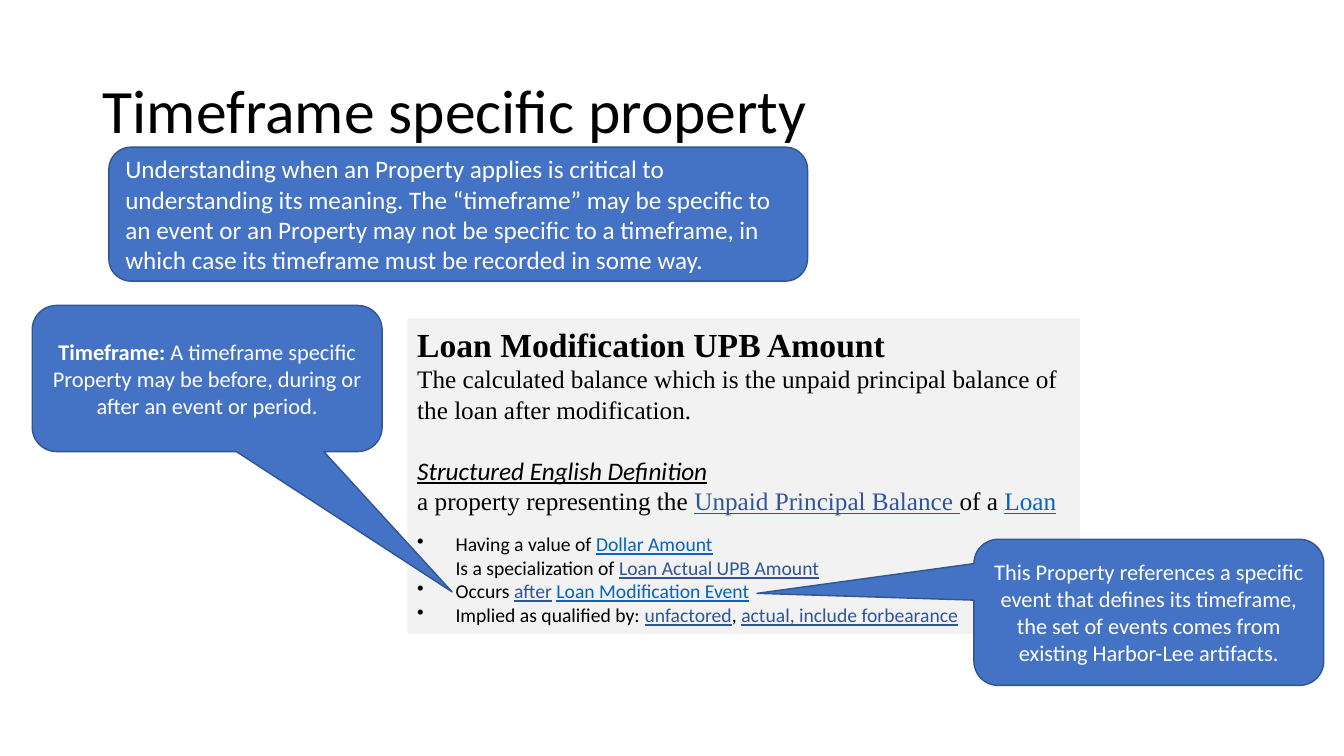
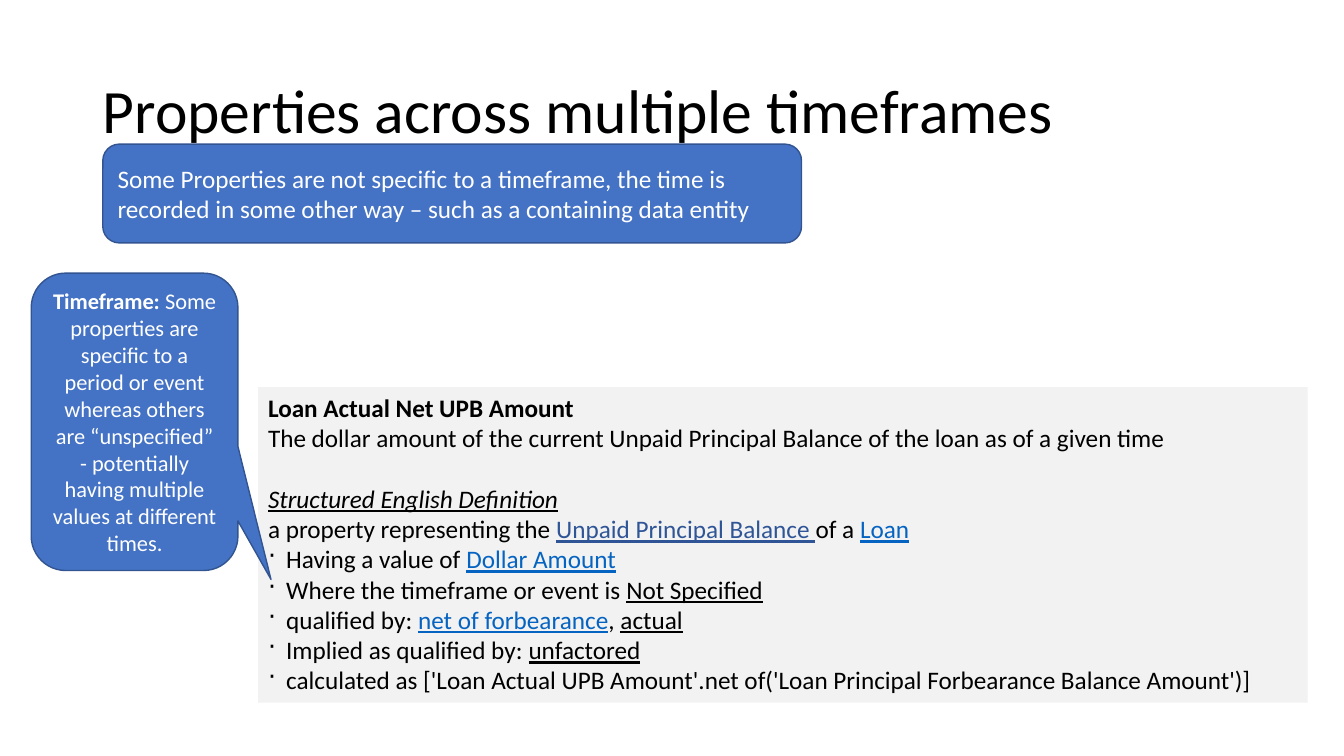
"""Build two slides on timeframe properties, each with a note, a definition panel and callouts."""
from pptx import Presentation
from pptx.dml.color import RGBColor
from pptx.enum.shapes import MSO_SHAPE as Shape
from pptx.enum.text import MSO_ANCHOR as Anchor, MSO_AUTO_SIZE as AutoSize, PP_ALIGN as Align
from pptx.oxml.ns import qn
from pptx.util import Pt
from lxml.etree import SubElement

PX = 9144
COLORS = {"black": "000000", "white": "FFFFFF", "blue": "4472C4", "outline": "325491",
          "panel": "F2F2F2", "term": "2F5597", "link": "0563C1"}
SANS, SERIF = "Calibri", "Times New Roman"
STYLES = {
    "plain": {},
    "bold": {"bold": True},
    "heading": {"italic": True, "underline": True},
    "under": {"underline": True},
    "term": {"underline": True, "color": "term"},
    "link": {"underline": True, "color": "link"},
}


def write(frame, paragraphs, base, alignment=Align.LEFT):
    """Fill a text frame with (format, spans) paragraphs over a base font."""
    frame.word_wrap = True
    for index, (layout, spans) in enumerate(paragraphs):
        para = frame.paragraphs[0] if index == 0 else frame.add_paragraph()
        para.alignment = alignment
        layout = dict(layout)
        font = {**base, **layout.pop("font", {})}
        bullet = layout.pop("bullet", None)
        for name, value in layout.items():
            setattr(para, name, value)
        if bullet:
            mark, indent = bullet
            props = para._p.get_or_add_pPr()
            props.set("marL", str(indent * PX))
            props.set("indent", str(-indent * PX))
            SubElement(props, qn("a:buChar")).set("char", mark)
        for text, style in spans:
            span = para.add_run()
            span.text = text
            values = {**font, **STYLES[style]}
            span.font.color.rgb = RGBColor.from_string(COLORS[values.pop("color")])
            for name, value in values.items():
                setattr(span.font, name, value)


def add_box(page, kind, place, fill, line=None):
    """Add a flat shape at a px place and return it."""
    box = page.shapes.add_shape(kind, *(length * PX for length in place))
    box.shadow.inherit = False
    box.fill.solid()
    box.fill.fore_color.rgb = RGBColor.from_string(COLORS[fill])
    if line:
        box.line.color.rgb = RGBColor.from_string(COLORS[line])
        box.line.width = Pt(1)
    else:
        box.line.fill.background()
    box.text_frame.vertical_anchor = Anchor.MIDDLE if line else Anchor.TOP
    return box


serif = {"font": {"name": SERIF}}
item = {"font": {"size": Pt(14)}, "bullet": ("•", 38)}
dot = {"bullet": ("·", 18)}
definition = [("a property representing the ", "plain"), ("Unpaid Principal Balance ", "term"),
              ("of a ", "plain"), ("Loan", "link")]
heading = ({"space_before": Pt(22)}, [("Structured English Definition", "heading")])

slides = [
    {
        "title": "Timeframe specific property",
        "note": ((108, 146, 693, 133),
                 "Understanding when an Property applies is critical to understanding its meaning. "
                 "The “timeframe” may be specific to an event or an Property may not be specific to "
                 "a timeframe, in which case its timeframe must be recorded in some way."),
        "panel": ((404, 316, 667, 313), [
            ({"font": {"name": SERIF, "size": Pt(24)}}, [("Loan Modification UPB Amount", "bold")]),
            (serif, [("The calculated balance which is the unpaid principal balance of the loan "
                      "after modification.", "plain")]),
            heading,
            ({**serif, "space_after": Pt(12)}, definition),
            (item, [("Having a value of ", "plain"), ("Dollar Amount", "link")]),
            (item, [("Is a specialization of ", "plain"), ("Loan Actual UPB Amount", "term")]),
            (item, [("Occurs ", "plain"), ("after", "term"), (" ", "plain"),
                    ("Loan Modification Event", "link")]),
            (item, [("Implied as qualified by: ", "plain"), ("unfactored", "term"), (", ", "plain"),
                    ("actual, include forbearance", "term")]),
        ]),
        "callouts": [
            ((32, 303, 347, 145), (0.7, 1.46),
             [("Timeframe: ", "bold"),
              ("A timeframe specific Property may be before, during or after an event or period.",
               "plain")]),
            ((966, 535, 347, 145), (-1.12, -0.13),
             [("This Property references a specific event that defines its timeframe, the set of "
               "events comes from existing Harbor-Lee artifacts.", "plain")]),
        ],
    },
    {
        "title": "Properties across multiple timeframes",
        "note": ((102, 143, 693, 98),
                 "Some Properties are not specific to a timeframe, the time is recorded in some "
                 "other way – such as a containing data entity"),
        "panel": ((256, 384, 1041, 313), [
            ({}, [("Loan Actual Net UPB Amount", "bold")]),
            ({}, [("The dollar amount of the current Unpaid Principal Balance of the loan as of a "
                   "given time", "plain")]),
            heading,
            ({}, definition),
            (dot, [("Having a value of ", "plain"), ("Dollar Amount", "link")]),
            (dot, [("Where the timeframe or event is ", "plain"), ("Not Specified", "under")]),
            (dot, [("qualified by: ", "plain"), ("net of forbearance", "link"), (", ", "plain"),
                   ("actual", "under")]),
            (dot, [("Implied as qualified by: ", "plain"), ("unfactored", "under")]),
            (dot, [("calculated as ['Loan Actual UPB Amount'.net of('Loan Principal Forbearance "
                    "Balance Amount')]", "plain")]),
        ]),
        "callouts": [
            ((31, 271, 205, 295), (0.66, 0.53),
             [("Timeframe: ", "bold"),
              ("Some properties are specific to a period or event whereas others are "
               "“unspecified” - potentially having multiple values at different times.", "plain")]),
        ],
    },
]

deck = Presentation()
deck.slide_width, deck.slide_height = 1333 * PX, 750 * PX

for content in slides:
    page = deck.slides.add_slide(deck.slide_layouts[5])
    title = page.shapes.title
    for name, length in {"left": 92, "top": 40, "width": 1150, "height": 145}.items():
        setattr(title, name, length * PX)
    title.text_frame.auto_size = AutoSize.NONE
    title.text_frame.vertical_anchor = Anchor.MIDDLE
    write(title.text_frame, [({"line_spacing": 0.9}, [(content["title"], "plain")])],
          {"name": SANS, "size": Pt(44), "color": "black"})

    place, paragraphs = content["panel"]
    panel = add_box(page, Shape.RECTANGLE, place, "panel")
    write(panel.text_frame, paragraphs, {"name": SANS, "size": Pt(18), "color": "black"})

    for place, tip, spans in content["callouts"]:
        callout = add_box(page, Shape.ROUNDED_RECTANGULAR_CALLOUT, place, "blue", "outline")
        callout.adjustments[0], callout.adjustments[1] = tip
        write(callout.text_frame, [({}, spans)],
              {"name": SANS, "size": Pt(16), "color": "white"}, Align.CENTER)

    place, text = content["note"]
    note = add_box(page, Shape.FLOWCHART_ALTERNATE_PROCESS, place, "blue", "outline")
    write(note.text_frame, [({}, [(text, "plain")])],
          {"name": SANS, "size": Pt(18), "color": "white"})

deck.save("out.pptx")
